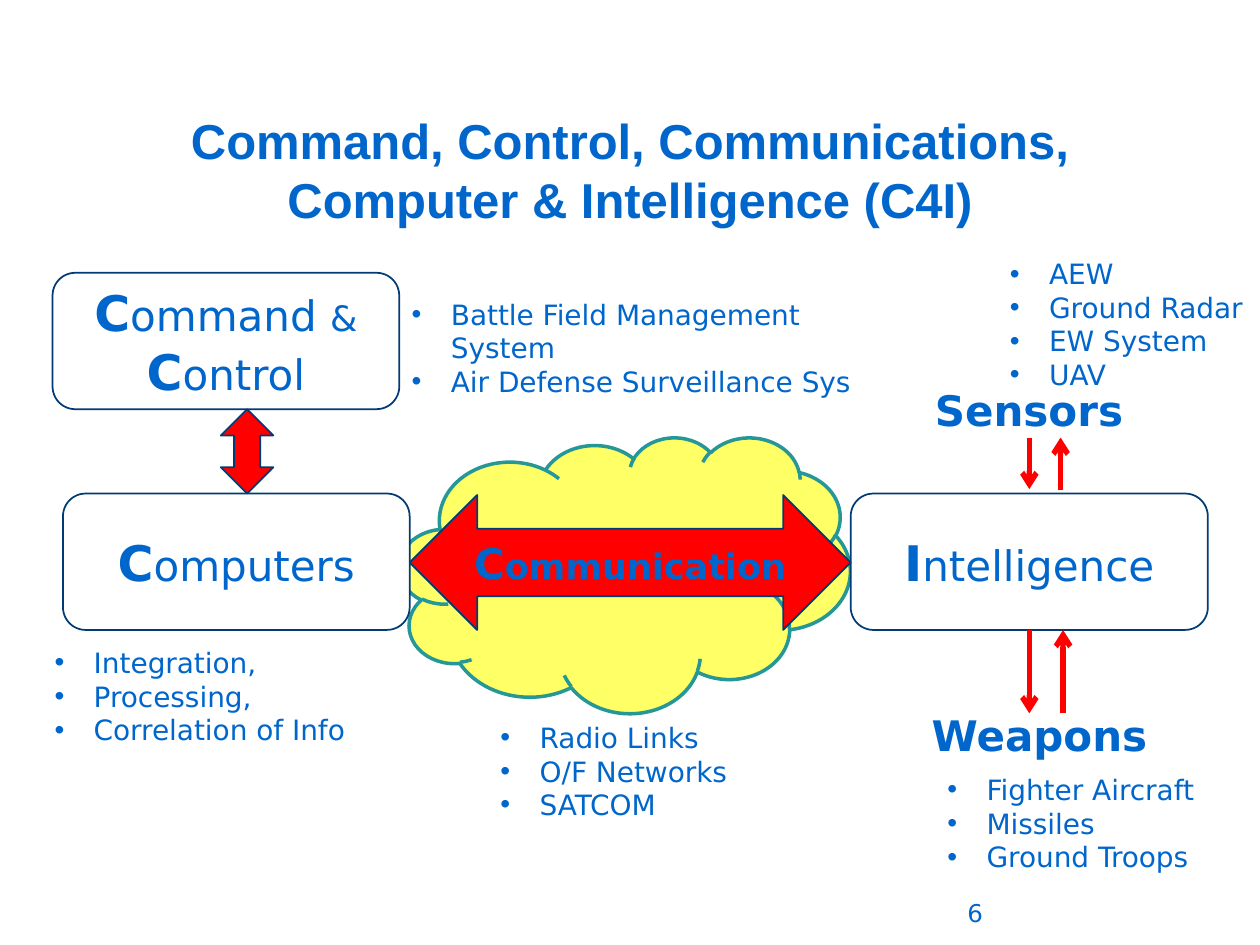
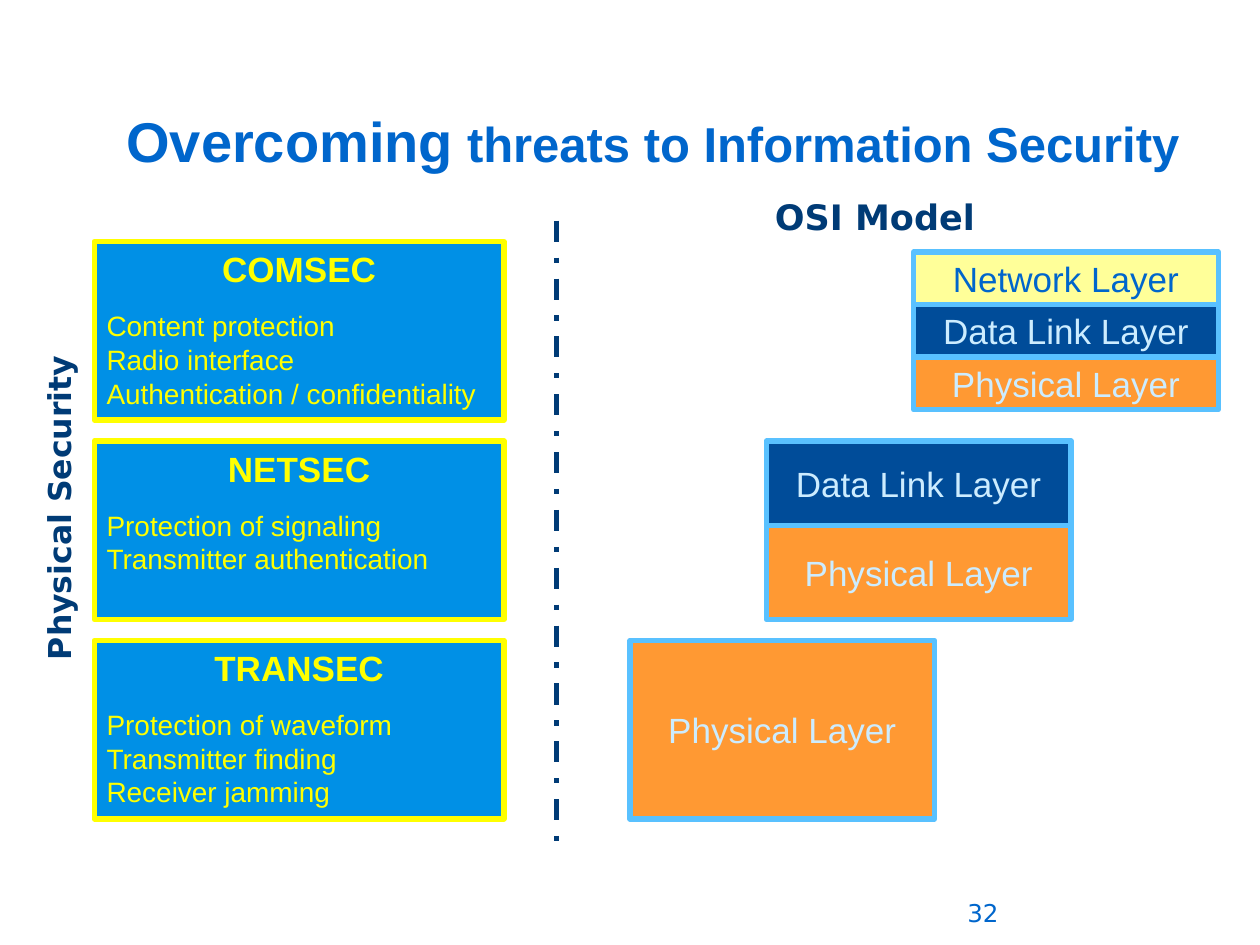
from dataclasses import dataclass
from typing import NamedTuple

from lxml.etree import SubElement
from pptx import Presentation
from pptx.dml.color import RGBColor
from pptx.enum.dml import MSO_LINE
from pptx.enum.shapes import MSO_CONNECTOR, MSO_SHAPE
from pptx.enum.text import MSO_ANCHOR, MSO_AUTO_SIZE, PP_ALIGN
from pptx.oxml.ns import qn
from pptx.util import Cm, Pt

# Shared look
BLUE, NAVY, RED, WHITE, YELLOW = "0066CC", "003B76", "FF0000", "FFFFFF", "FFFF00"
SKY, LAYER_EDGE = "0090E6", "59C1FF"
TITLE_FONT, DIAGRAM_FONT = "Arial", "DejaVu Sans"
BULLET_INDENT = Cm(0.79)


class Box(NamedTuple):
    left: float
    top: float
    width: float
    height: float

    def lengths(self) -> list:
        return [Cm(side) for side in self]


class Span(NamedTuple):
    text: str
    size: float
    bold: bool = False


@dataclass
class Style:
    size: float
    color: str = BLUE
    bold: bool = False
    face: str = DIAGRAM_FONT
    align: PP_ALIGN = PP_ALIGN.LEFT


@dataclass
class Node:
    box: Box
    spans: list[Span]


@dataclass
class BulletList:
    box: Box
    items: list[str]


@dataclass
class SecurityBlock:
    heading: str
    measures: list[str]


@dataclass
class LayerStack:
    left: float
    top: float
    layers: list[tuple[str, float]]


LIST_STYLE = Style(16)
LABEL_STYLE = Style(24, bold=True, align=PP_ALIGN.CENTER)
NUMBER_STYLE = Style(14)
TITLE_STYLE = Style(28, bold=True, face=TITLE_FONT, align=PP_ALIGN.CENTER)
NODE_STYLE = Style(24, align=PP_ALIGN.CENTER)


def rgb(color: str) -> RGBColor:
    return RGBColor.from_string(color)


def format_paragraph(paragraph, style: Style) -> None:
    paragraph.alignment = style.align
    font = paragraph.font
    font.name, font.size, font.bold = style.face, Pt(style.size), style.bold
    font.color.rgb = rgb(style.color)


def write_spans(paragraph, spans: list[Span], style: Style) -> None:
    format_paragraph(paragraph, style)
    for span in spans:
        run = paragraph.add_run()
        run.text = span.text
        run.font.size, run.font.bold = Pt(span.size), span.bold


def add_text(slide, box: Box, text: str, style: Style):
    label = slide.shapes.add_textbox(*box.lengths())
    label.text_frame.word_wrap = True
    paragraph = label.text_frame.paragraphs[0]
    paragraph.text = text
    format_paragraph(paragraph, style)
    return label


def add_bullets(slide, bullets: BulletList) -> None:
    frame = slide.shapes.add_textbox(*bullets.box.lengths()).text_frame
    frame.word_wrap = True
    for index, item in enumerate(bullets.items):
        paragraph = frame.add_paragraph() if index else frame.paragraphs[0]
        paragraph.text = item
        properties = paragraph._p.get_or_add_pPr()
        properties.set("marL", str(BULLET_INDENT))
        properties.set("indent", str(-BULLET_INDENT))
        SubElement(properties, qn("a:buFont")).set("typeface", "Arial")
        SubElement(properties, qn("a:buChar")).set("char", "•")
        format_paragraph(paragraph, LIST_STYLE)


def add_figure(slide, kind: MSO_SHAPE, box: Box, fill: str, edge: str, weight: float):
    figure = slide.shapes.add_shape(kind, *box.lengths())
    figure.shadow.inherit = False
    figure.fill.solid()
    figure.fill.fore_color.rgb = rgb(fill)
    figure.line.color.rgb = rgb(edge)
    figure.line.width = Pt(weight)
    return figure


def add_line(slide, start: tuple[float, float], end: tuple[float, float], color: str,
             arrow: bool = False, dash: MSO_LINE | None = None) -> None:
    line = slide.shapes.add_connector(
        MSO_CONNECTOR.STRAIGHT, *(Cm(value) for value in (*start, *end)))
    line.line.color.rgb = rgb(color)
    line.line.width = Pt(3)
    if dash is not None:
        line.line.dash_style = dash
    properties = line.element.spPr
    if arrow:
        SubElement(properties.find(qn("a:ln")), qn("a:tailEnd")).set("type", "arrow")
    SubElement(properties, qn("a:effectLst"))


def start_slide(deck, box: Box, title: list[Span], number: str):
    slide = deck.slides.add_slide(deck.slide_layouts[5])
    heading = slide.shapes.title
    heading.left, heading.top, heading.width, heading.height = box.lengths()
    frame = heading.text_frame
    frame.auto_size = MSO_AUTO_SIZE.NONE
    frame.vertical_anchor = MSO_ANCHOR.MIDDLE
    write_spans(frame.paragraphs[0], title, TITLE_STYLE)
    add_text(slide, Box(19.25, 17.98, 5.92, 1.27 - 0.2), number, NUMBER_STYLE)
    return slide


# Slide 1: C4I diagram
C4I_NODES = [
    Node(Box(1.06, 5.5, 6.99, 2.75),
         [Span("C", 28, True), Span("ommand ", 24), Span("& ", 20),
          Span("C", 28, True), Span("ontrol", 24)]),
    Node(Box(1.27, 9.95, 6.99, 2.75), [Span("C", 28, True), Span("omputers", 24)]),
    Node(Box(17.15, 9.95, 7.2, 2.75), [Span("I", 28, True), Span("ntelligence", 24)]),
]
C4I_LISTS = [
    BulletList(Box(8.05, 5.87, 9.95, 2.31),
               ["Battle Field Management System", "Air Defense Surveillance Sys"]),
    BulletList(Box(9.84, 14.4, 5.72, 2.31), ["Radio Links", "O/F Networks", "SATCOM"]),
    BulletList(Box(0.85, 12.89, 6.77, 2.31),
               ["Integration,", "Processing,", "Correlation of Info"]),
    BulletList(Box(20.11, 5.05, 5.29, 3), ["AEW", "Ground Radar", "EW System", "UAV"]),
    BulletList(Box(18.85, 15.45, 5.92, 2.31),
               ["Fighter Aircraft", "Missiles", "Ground Troops"]),
]
C4I_FLOWS = [  # x, start y, end y
    (20.75, 8.82, 9.86), (20.75, 12.7, 14.38),
    (21.38, 9.88, 8.82), (21.43, 14.38, 12.7),
]


def build_c4i(deck) -> None:
    slide = start_slide(
        deck, Box(1.27, 2.11, 22.86, 2.62),
        [Span("Command, Control, Communications, Computer & Intelligence (C4I)", 28, True)],
        "6")
    add_figure(slide, MSO_SHAPE.CLOUD, Box(8.05, 8.81, 9.09, 5.56), "FFFF66", "269797", 2)

    for node in C4I_NODES:
        figure = add_figure(slide, MSO_SHAPE.ROUNDED_RECTANGLE, node.box, WHITE, NAVY, 1)
        write_spans(figure.text_frame.paragraphs[0], node.spans, NODE_STYLE)

    # Links between the nodes
    communication = add_figure(slide, MSO_SHAPE.LEFT_RIGHT_ARROW,
                               Box(8.26, 9.98, 8.89, 2.72), RED, NAVY, 1)
    write_spans(communication.text_frame.paragraphs[0],
                [Span("C", 24, True), Span("ommunication", 20, True)], NODE_STYLE)
    control_link = add_figure(slide, MSO_SHAPE.LEFT_RIGHT_ARROW,
                              Box(4.13, 8.57, 1.7, 1.06), RED, NAVY, 1)
    control_link.rotation = 90
    for x, start, end in C4I_FLOWS:
        add_line(slide, (x, start), (x, end), RED, arrow=True)

    # Labels and lists
    add_text(slide, Box(16.3, 7.62, 8.89, 1.27), "Sensors", LABEL_STYLE)
    add_text(slide, Box(16.51, 14.18, 8.89, 1.27), "Weapons", LABEL_STYLE)
    for bullets in C4I_LISTS:
        add_bullets(slide, bullets)


# Slide 2: security blocks beside the OSI layers
SECURITY_BLOCKS = [
    SecurityBlock("COMSEC", ["Content protection", "Radio interface",
                             "Authentication / confidentiality"]),
    SecurityBlock("NETSEC", ["Protection of signaling", "Transmitter authentication"]),
    SecurityBlock("TRANSEC", ["Protection of waveform", "Transmitter finding",
                              "Receiver jamming"]),
]
BLOCK_TOP, BLOCK_PITCH, BLOCK_HEIGHT = 4.87, 4.02, 3.6
LAYER_COLORS = {  # fill, text
    "Network Layer": ("FFFF99", BLUE),
    "Data Link Layer": ("004C99", "CCECFF"),
    "Physical Layer": ("FF9933", "CCECFF"),
}
LAYER_WIDTH = 6.14
LAYER_STACKS = [
    LayerStack(18.42, 5.08, [(layer, 1.06) for layer in LAYER_COLORS]),
    LayerStack(15.45, BLOCK_TOP + BLOCK_PITCH,
               [("Data Link Layer", 1.7), ("Physical Layer", 1.9)]),
    LayerStack(12.7, BLOCK_TOP + 2 * BLOCK_PITCH, [("Physical Layer", BLOCK_HEIGHT)]),
]


def add_security_block(slide, block: SecurityBlock, top: float) -> None:
    figure = add_figure(slide, MSO_SHAPE.RECTANGLE, Box(1.9, top, 8.26, BLOCK_HEIGHT),
                        SKY, YELLOW, 3)
    frame = figure.text_frame
    frame.vertical_anchor = MSO_ANCHOR.TOP
    heading, measures = frame.paragraphs[0], frame.add_paragraph()
    heading.text = block.heading
    heading.space_after = Pt(11)
    format_paragraph(heading, Style(20, YELLOW, True, TITLE_FONT, PP_ALIGN.CENTER))
    measures.text = "\n".join(block.measures)
    format_paragraph(measures, Style(16, YELLOW, face=TITLE_FONT))


def add_layer_stack(slide, stack: LayerStack) -> None:
    top = stack.top
    for layer, height in stack.layers:
        fill, color = LAYER_COLORS[layer]
        figure = add_figure(slide, MSO_SHAPE.RECTANGLE,
                            Box(stack.left, top, LAYER_WIDTH, height), fill, LAYER_EDGE, 3)
        paragraph = figure.text_frame.paragraphs[0]
        paragraph.text = layer
        format_paragraph(paragraph, Style(20, color, face=TITLE_FONT, align=PP_ALIGN.CENTER))
        top += height


def build_security(deck) -> None:
    slide = start_slide(
        deck, Box(1.73, 1.88, 22.86, 1.9),
        [Span("Overcoming", 32, True), Span(" threats to Information Security", 28, True)],
        "32")
    for index, block in enumerate(SECURITY_BLOCKS):
        add_security_block(slide, block, BLOCK_TOP + index * BLOCK_PITCH)
    for stack in LAYER_STACKS:
        add_layer_stack(slide, stack)
    add_line(slide, (11.22, 4.45), (11.22, 17.15), NAVY, dash=MSO_LINE.DASH_DOT)

    # Side and top headings
    physical = add_text(slide, Box(-2.84, 9.02, 8.05, 1.02), "Physical Security",
                        Style(18, NAVY, True))
    physical.rotation = 270
    add_text(slide, Box(15.37, 3.81, 4.95, 1.12), "OSI Model", Style(20, NAVY, True))


def main() -> None:
    deck = Presentation()
    deck.slide_width, deck.slide_height = Cm(25.4), Cm(19.05)
    build_c4i(deck)
    build_security(deck)
    deck.save("out.pptx")


if __name__ == "__main__":
    main()
